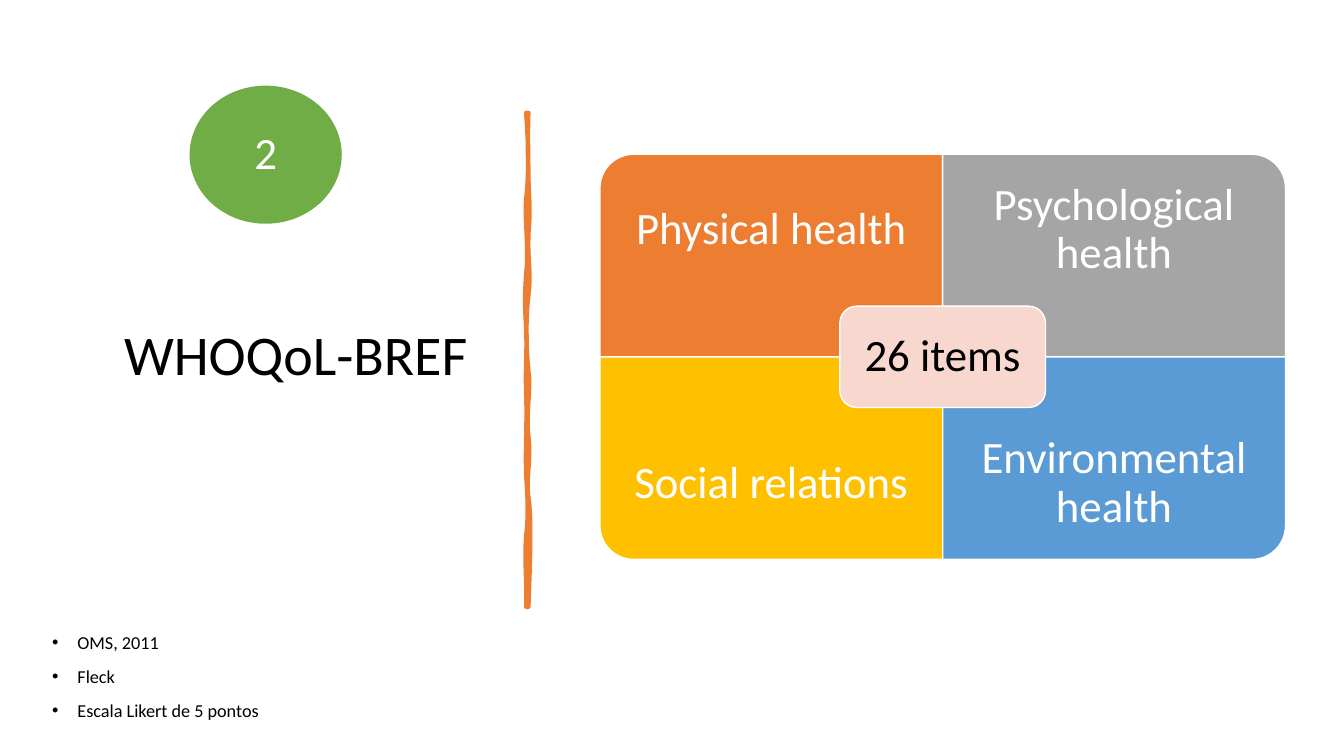
from dataclasses import dataclass

from lxml import etree
from pptx import Presentation
from pptx.dml.color import RGBColor
from pptx.enum.shapes import MSO_SHAPE
from pptx.enum.text import MSO_ANCHOR, PP_ALIGN
from pptx.oxml.ns import qn
from pptx.util import Inches, Pt

LEFT, CENTER = PP_ALIGN.LEFT, PP_ALIGN.CENTER
TOP, MIDDLE = MSO_ANCHOR.TOP, MSO_ANCHOR.MIDDLE
DISC = MSO_SHAPE.FLOWCHART_CONNECTOR
CORNER = MSO_SHAPE.ROUND_1_RECTANGLE
ROUNDED = MSO_SHAPE.ROUNDED_RECTANGLE

TITLE = "WHOQoL-BREF"
NUMBER = "2"
CORE = "26 items"
NOTES = ["OMS, 2011", "Fleck", "Escala Likert de 5 pontos"]
# Text, column, row, fill, turn of the rounded corner
DOMAINS = [
    ("Physical health", 0, 0, "ED7D31", 270),
    ("Psychological health", 1, 0, "A5A5A5", 0),
    ("Social relations", 0, 1, "FFC000", 180),
    ("Environmental health", 1, 1, "5B9BD5", 90),
]
# Hand-drawn bar: a start point, then curves of two handles and an end
START = (5.24, 1.12)
CURVES = [
    (5.23, 1.42, 5.24, 1.49, 5.24, 1.77),
    (5.25, 2.06, 5.26, 2.07, 5.24, 2.33),
    (5.23, 2.59, 5.27, 2.69, 5.24, 2.93),
    (5.21, 3.17, 5.22, 3.50, 5.24, 3.68),
    (5.27, 3.86, 5.21, 4.10, 5.24, 4.33),
    (5.27, 4.56, 5.21, 4.76, 5.24, 4.93),
    (5.27, 5.11, 5.26, 5.51, 5.24, 6.02),
    (5.23, 6.02, 5.23, 6.02, 5.22, 6.02),
    (5.23, 5.84, 5.20, 5.53, 5.22, 5.32),
    (5.24, 5.12, 5.24, 5.00, 5.22, 4.72),
    (5.21, 4.44, 5.23, 4.22, 5.22, 3.92),
    (5.21, 3.63, 5.23, 3.47, 5.22, 3.27),
    (5.21, 3.07, 5.20, 2.97, 5.22, 2.72),
    (5.25, 2.47, 5.20, 2.12, 5.22, 1.97),
    (5.24, 1.82, 5.25, 1.52, 5.22, 1.12),
]


@dataclass(frozen=True)
class Theme:
    font: str = "Calibri"
    dark: str = "000000"
    light: str = "FFFFFF"
    bar: str = "ED7D31"
    disc: str = "70AD47"
    core: str = "F8D7CE"
    title: int = 40
    label: int = 32
    note: int = 13


THEME = Theme()
GRID_X, GRID_Y, CELL_W, CELL_H = 5.95, 1.53, 3.4, 2.01
LABEL_H = CELL_H * 0.75
CORE_W, CORE_H = CELL_W * 0.6, CELL_H * 0.5
STEPS = 8


def rgb(code):
    return RGBColor.from_string(code)


def write(shape, lines, size=THEME.label, color=THEME.light, align=CENTER,
          anchor=MIDDLE, inset=None, bullet=False):
    frame = shape.text_frame
    frame.word_wrap = True
    frame.vertical_anchor = anchor
    if inset is not None:
        frame.margin_left = frame.margin_right = Inches(inset)
        frame.margin_top = frame.margin_bottom = Inches(inset)
    for i, line in enumerate(lines):
        para = frame.add_paragraph() if i else frame.paragraphs[0]
        para.alignment = align
        para.line_spacing = 0.9
        run = para.add_run()
        run.text = line
        run.font.name = THEME.font
        run.font.size = Pt(size)
        run.font.color.rgb = rgb(color)
        if bullet:
            para.space_before = Pt(10)
            props = para._p.get_or_add_pPr()
            props.set("marL", str(Inches(0.25)))
            props.set("indent", str(Inches(-0.25)))
            etree.SubElement(props, qn("a:buFont"), typeface="Arial")
            etree.SubElement(props, qn("a:buChar"), char="•")


def paint(shape, fill, line=None, width=1):
    shape.shadow.inherit = False
    shape.fill.solid()
    shape.fill.fore_color.rgb = rgb(fill)
    if line:
        shape.line.color.rgb = rgb(line)
        shape.line.width = Pt(width)
    else:
        shape.line.fill.background()


def add_shape(slide, kind, box, fill, line=None):
    shape = slide.shapes.add_shape(kind, *map(Inches, box))
    paint(shape, fill, line)
    return shape


def add_text(slide, box, lines, **style):
    write(slide.shapes.add_textbox(*map(Inches, box)), lines, **style)


def trace(start, curves):
    """Turn cubic curves into short straight steps."""
    points = []
    for x1, y1, x2, y2, x3, y3 in curves:
        for step in range(1, STEPS + 1):
            t = step / STEPS
            u = 1 - t
            points.append(tuple(
                Inches(u**3 * a + 3 * u * u * t * b + 3 * u * t * t * c + t**3 * d)
                for a, b, c, d in ((start[0], x1, x2, x3), (start[1], y1, y2, y3))))
        start = (x3, y3)
    return points


def add_bar(slide):
    pen = slide.shapes.build_freeform(*map(Inches, START))
    pen.add_line_segments(trace(START, CURVES), close=True)
    paint(pen.convert_to_shape(), THEME.bar, THEME.bar, 3.25)


def add_domain(slide, name, col, row, fill, turn):
    x, y = GRID_X + col * CELL_W, GRID_Y + row * CELL_H
    wide, high = (CELL_H, CELL_W) if turn % 180 else (CELL_W, CELL_H)
    box = (x + (CELL_W - wide) / 2, y + (CELL_H - high) / 2, wide, high)
    add_shape(slide, CORNER, box, fill, THEME.light).rotation = turn
    top = y + row * (CELL_H - LABEL_H)
    add_text(slide, (x, top, CELL_W, LABEL_H), [name], inset=0.25)


def main():
    deck = Presentation()
    deck.slide_width, deck.slide_height = Inches(13.33), Inches(7.5)
    slide = deck.slides.add_slide(deck.slide_layouts[5])

    title = slide.shapes.title
    title.left, title.top = Inches(1.13), Inches(0.58)
    title.width, title.height = Inches(3.65), Inches(5.94)
    write(title, [TITLE], size=THEME.title, color=THEME.dark, align=LEFT)

    add_bar(slide)
    disc = add_shape(slide, DISC, (1.88, 0.85, 1.51, 1.37), THEME.disc)
    write(disc, [NUMBER])
    add_text(slide, (0.42, 6.24, 2.54, 1.1), NOTES, size=THEME.note,
             color=THEME.dark, align=LEFT, anchor=TOP, bullet=True)

    for domain in DOMAINS:
        add_domain(slide, *domain)
    box = (GRID_X + CELL_W - CORE_W / 2, GRID_Y + CELL_H - CORE_H / 2, CORE_W, CORE_H)
    core = add_shape(slide, ROUNDED, box, THEME.core, THEME.light)
    write(core, [CORE], color=THEME.dark, inset=0.13)

    deck.save("out.pptx")


if __name__ == "__main__":
    main()
